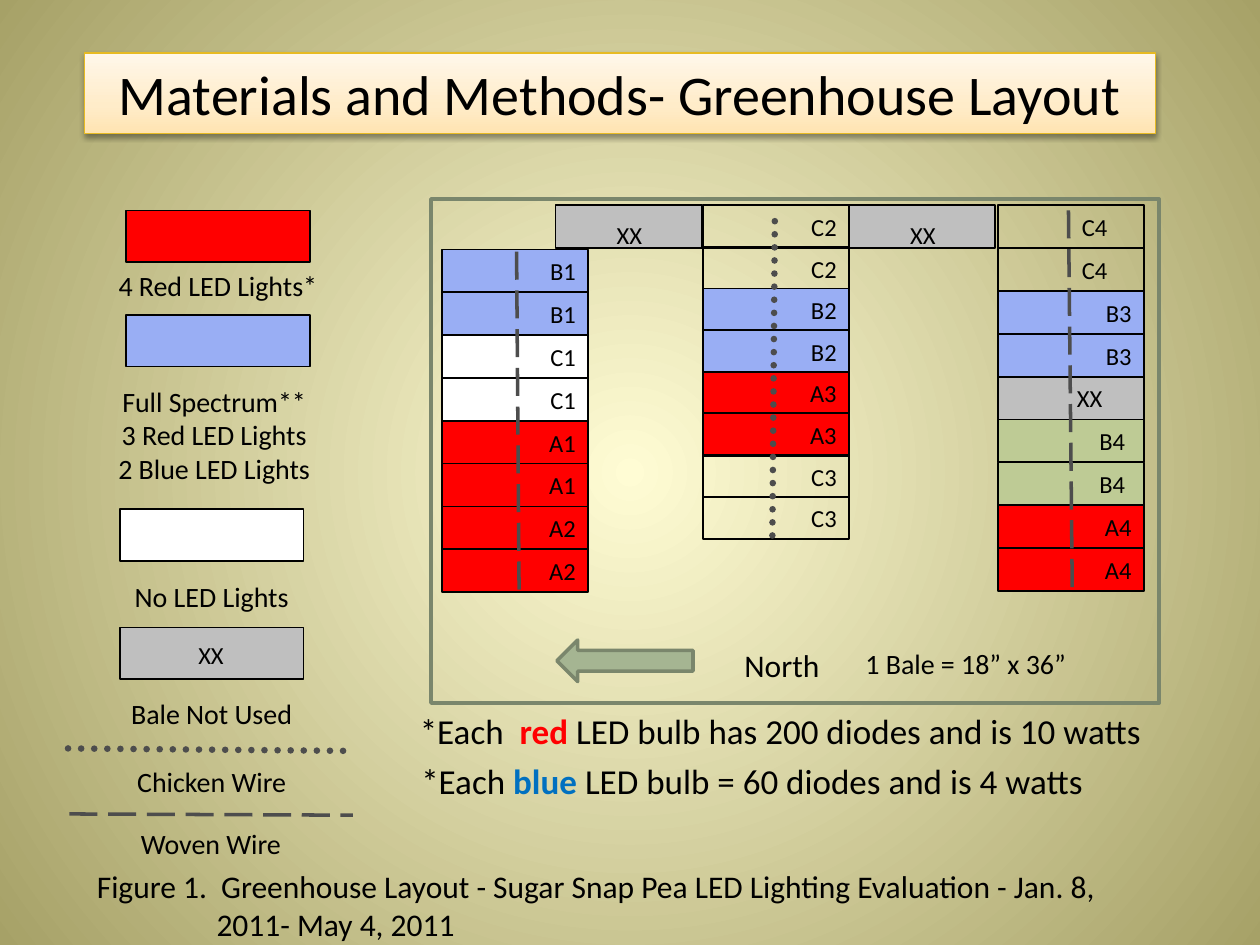
from lxml import etree
from pptx import Presentation
from pptx.dml.color import RGBColor
from pptx.enum.dml import MSO_LINE
from pptx.enum.shapes import MSO_CONNECTOR, MSO_SHAPE
from pptx.enum.text import MSO_ANCHOR as ANCHOR, PP_ALIGN as ALIGN
from pptx.oxml import parse_xml
from pptx.oxml.ns import nsdecls, qn
from pptx.util import Inches, Pt

COLORS = {
    "black": "000000", "white": "FFFFFF", "red": "FF0000",
    "full": "99AEF4", "unused": "BFBFBF", "green": "BECB95",
    "wire": "4D4D4D", "arrow": "A5B592", "frame": "7A866C",
    "gold": "E7BA23", "blue": "0070C0",
    "cream": "FFFCD4", "olive": "A6A167",
    "title_low": "FFE4B2", "title_mid": "FFECC9", "title_high": "FFF7EA",
}
FONT = "Calibri"
BALE = (1.16, 0.34)
SWATCH = (1.46, 0.41)
COLUMNS = [
    (3.51, 1.98, 0.34, [
        ("B1", "full", 0.1, 2), ("C1", "white", 0.1, 2),
        ("A1", "red", 0.1, 2), ("A2", "red", 0.1, 2)]),
    (5.58, 1.63, 0.33, [
        ("C2", None, 0.1, 2), ("B2", "full", 0.1, 2),
        ("A3", "red", 0.1, 2), ("C3", None, 0.1, 2)]),
    (7.92, 1.63, 0.34, [
        ("C4", None, 0.29, 2), ("B3", "full", 0.1, 2),
        ("XX", "unused", 0.33, 1), ("B4", "green", 0.15, 2),
        ("A4", "red", 0.1, 2)]),
]
SWATCHES = [(1, 1.67, "red"), (1, 2.5, "full"),
            (0.95, 4.04, "white"), (0.95, 4.98, "unused")]
LABELS = [
    ((0.83, 2.08, 1.8, 0.37), ["4 Red LED Lights*"]),
    ((0.83, 3, 1.74, 0.91),
     ["Full Spectrum**", "3 Red LED Lights", "2 Blue LED Lights"]),
    ((0.96, 4.55, 1.44, 0.37), ["No LED Lights"]),
    ((0.93, 5.48, 1.5, 0.37), ["Bale Not Used"]),
    ((0.98, 6.02, 1.4, 0.37), ["Chicken Wire"]),
    ((1.01, 6.51, 1.33, 0.37), ["Woven Wire"]),
]
WOVEN = {"dash_style": MSO_LINE.LONG_DASH, "width": Pt(2)}
CHICKEN = {"dash_style": MSO_LINE.ROUND_DOT, "width": Pt(3.75)}
WIRES = [
    ((4.12, 4.68, 4.1, 1.96), WOVEN),
    ((8.51, 4.66, 8.48, 1.67), WOVEN),
    ((6.13, 4.25, 6.15, 1.68), CHICKEN),
    ((0.54, 5.94, 2.81, 5.96), CHICKEN),
    ((0.55, 6.46, 2.8, 6.47), WOVEN),
]


def rgb(name):
    return RGBColor.from_string(COLORS[name])


def apply(target, values):
    for name, value in values.items():
        setattr(target, name, value)


def inches(values):
    return [Inches(value) for value in values]


def write(frame, lines, size, align=ALIGN.CENTER):
    for number, line in enumerate(lines):
        para = frame.add_paragraph() if number else frame.paragraphs[0]
        para.alignment = align
        for text, color, bold in [(line, "black", False)] if isinstance(line, str) else line:
            span = para.add_run()
            span.text = text
            apply(span.font, {"name": FONT, "size": Pt(size), "bold": bold})
            span.font.color.rgb = rgb(color)


def add_text(page, place, lines, size, align=ALIGN.CENTER, wrap=False):
    box = page.shapes.add_textbox(*inches(place))
    box.text_frame.word_wrap = wrap
    write(box.text_frame, lines, size, align)
    return box


def add_block(page, place, fill, line="black", width=1, kind=MSO_SHAPE.RECTANGLE):
    block = page.shapes.add_shape(kind, *inches(place))
    block.shadow.inherit = False
    if fill:
        block.fill.solid()
        block.fill.fore_color.rgb = rgb(fill)
    else:
        block.fill.background()
    block.line.color.rgb = rgb(line)
    block.line.width = Pt(width)
    return block


def add_column(page, left, top, pitch, groups):
    bales = [group[:3] for group in groups for _ in range(group[3])]
    for row, (code, fill, inset) in enumerate(bales):
        bale = add_block(page, (left, top + row * pitch, *BALE), fill)
        apply(bale.text_frame, {"vertical_anchor": ANCHOR.MIDDLE,
                                "margin_right": Inches(inset)})
        write(bale.text_frame, [code], 14, ALIGN.RIGHT)


def add_wire(page, ends, style):
    wire = page.shapes.add_connector(MSO_CONNECTOR.STRAIGHT, *inches(ends))
    wire.line.color.rgb = rgb("wire")
    apply(wire.line, style)
    properties = wire._element.spPr
    if style is CHICKEN:
        properties.find(qn("a:ln")).set("cap", "rnd")
    etree.SubElement(properties, qn("a:effectLst"))


def set_gradient(parent, stops, direction):
    marks = "".join(
        f'<a:gs pos="{spot * 1000}"><a:srgbClr val="{COLORS[name]}"/></a:gs>'
        for spot, name in stops)
    gradient = parse_xml(f'<a:gradFill {nsdecls("a")} rotWithShape="1">'
                         f'<a:gsLst>{marks}</a:gsLst>{direction}</a:gradFill>')
    parent.replace(parent.find(qn("a:solidFill")), gradient)


def add_background(page):
    page.background.fill.solid()
    set_gradient(page._element.find(f".//{qn('p:bgPr')}"),
                 [(0, "cream"), (100, "olive")],
                 '<a:path path="circle"><a:fillToRect l="50000" t="50000"'
                 ' r="50000" b="50000"/></a:path>')


def add_title(page, text):
    title = page.shapes.title
    left, top, width, height = inches((0.67, 0.42, 8.5, 0.64))
    apply(title, {"left": left, "top": top, "width": width, "height": height})
    title.text_frame.vertical_anchor = ANCHOR.MIDDLE
    write(title.text_frame, [text], 32)
    title.fill.solid()
    title.line.color.rgb = rgb("gold")
    title.line.width = Pt(0.75)
    properties = title._element.spPr
    set_gradient(properties, [(0, "title_low"), (35, "title_mid"), (100, "title_high")],
                 '<a:lin ang="16200000" scaled="1"/>')
    properties.append(parse_xml(
        f'<a:effectLst {nsdecls("a")}><a:outerShdw blurRad="{Pt(3.1)}" dist="{Pt(1.6)}"'
        f' dir="5400000" rotWithShape="0"><a:srgbClr val="{COLORS["black"]}">'
        '<a:alpha val="38000"/></a:srgbClr></a:outerShdw></a:effectLst>'))


def add_captions(page):
    add_text(page, (3.21, 5.58, 5.97, 0.52), [[
        ("*Each  ", "black", False), ("red ", "red", True),
        ("LED bulb has 200 diodes and is 10 watts", "black", False)]], 20)
    add_text(page, (2.67, 5.98, 6.6, 0.52), [[
        ("*Each ", "black", False), ("blue", "blue", True),
        (" LED bulb = 60 diodes and is 4 watts", "black", False)]], 20, wrap=True)
    add_text(page, (6.77, 5.08, 1.81, 0.37), ["1 Bale = 18” x 36”"], 16, ALIGN.LEFT)
    add_text(page, (5.81, 5.08, 0.9, 0.4), ["North"], 18, ALIGN.LEFT)
    figure = add_text(page, (0.67, 6.83, 8.75, 0.67), [
        "Figure 1.  Greenhouse Layout - Sugar Snap Pea LED Lighting Evaluation - Jan. 8,",
        "2011- May 4, 2011"], 18, ALIGN.LEFT, True)
    figure.text_frame.paragraphs[1]._p.get_or_add_pPr().set("marL", str(Inches(0.95)))


def main():
    deck = Presentation()
    apply(deck, {"slide_width": Inches(10), "slide_height": Inches(7.5)})
    page = deck.slides.add_slide(deck.slide_layouts[5])
    add_background(page)
    add_title(page, "Materials and Methods- Greenhouse Layout")
    add_block(page, (3.42, 1.58, 5.78, 4), None, "frame", 2)
    for column in COLUMNS:
        add_column(page, *column)
    for left in (4.41, 6.74):
        add_block(page, (left, 1.63, *BALE), "unused")
        add_text(page, (left + 0.38, 1.7, 0.41, 0.32), ["XX"], 14)
    for left, top, fill in SWATCHES:
        add_block(page, (left, top, *SWATCH), fill)
    add_text(page, (1.34, 5.03, 0.67, 0.45), ["XX"], 14)
    for place, lines in LABELS:
        add_text(page, place, lines, 16)
    for ends, style in WIRES:
        add_wire(page, ends, style)
    add_captions(page)
    add_block(page, (4.42, 5.08, 1.08, 0.33), "arrow", "frame", 2, MSO_SHAPE.LEFT_ARROW)
    deck.save("out.pptx")


if __name__ == "__main__":
    main()
